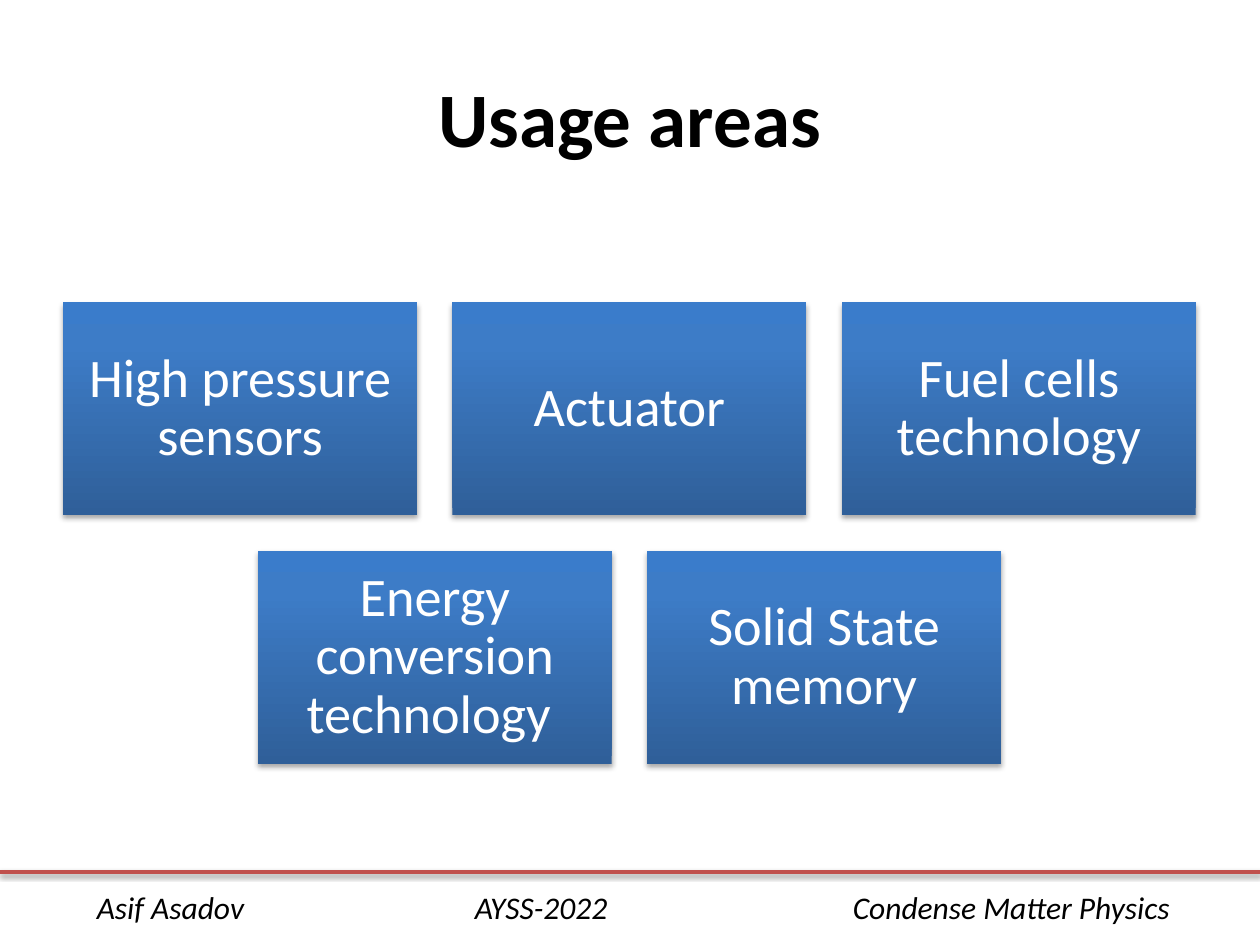
from dataclasses import dataclass

from lxml import etree
from pptx import Presentation, util as u
from pptx.dml.color import RGBColor
from pptx.enum import shapes, text
from pptx.oxml.ns import qn

COLORS = {"ink": "000000", "card_text": "FFFFFF", "rule": "C0504D"}
CARD_GRADIENT = ((0, "2F5F99"), (80, "3D7CC7"), (100, "3A7CCB"))
FONT = "Calibri"
WIDTH, HEIGHT = u.Inches(10), u.Inches(7.5)

# Card grid: three columns inside the side margins
LEFT, TOP = u.Inches(0.5), u.Inches(2.4)
CARD_W, CARD_H, GAP = u.Inches(2.81), u.Inches(1.69), u.Inches(0.28)


@dataclass
class Card:
    label: str
    column: float
    row: int


CARDS = (
    Card("High pressure sensors", 0, 0),
    Card("Actuator", 1, 0),
    Card("Fuel cells technology", 2, 0),
    Card("Energy conversion technology ", 0.5, 1),
    Card("Solid State memory", 1.5, 1),
)


def add_color(parent, hex_color: str):
    return etree.SubElement(parent, qn("a:srgbClr"), val=hex_color)


def add_shadow(effects, opacity: int, distance: float) -> None:
    """Cast a soft shadow straight down."""
    shadow = etree.SubElement(
        effects, qn("a:outerShdw"), blurRad=str(u.Pt(3.1)),
        dist=str(u.Pt(distance)), dir="5400000", rotWithShape="0")
    color = add_color(shadow, COLORS["ink"])
    etree.SubElement(color, qn("a:alpha"), val=str(opacity * 1000))


def write(tf, content: str, size: int, color: str, **style: bool):
    tf.word_wrap = True
    tf.text = content
    p = tf.paragraphs[0]
    for r in p.runs:
        r.font.name, r.font.size = FONT, u.Pt(size)
        r.font.color.rgb = RGBColor.from_string(COLORS[color])
        for name, value in style.items():
            setattr(r.font, name, value)
    return p


def add_card(slide, card: Card) -> None:
    sp = slide.shapes.add_shape(
        shapes.MSO_SHAPE.RECTANGLE,
        int(LEFT + card.column * (CARD_W + GAP)),
        TOP + card.row * (CARD_H + GAP), CARD_W, CARD_H)
    sp.fill.gradient()
    sp.fill.gradient_angle = 90
    stops = sp._element.spPr.find(".//" + qn("a:gsLst"))
    for stop in list(stops):
        stops.remove(stop)
    for position, color in CARD_GRADIENT:
        add_color(etree.SubElement(stops, qn("a:gs"), pos=str(position * 1000)), color)
    sp.line.fill.background()
    sp.shadow.inherit = False
    add_shadow(sp._element.spPr.find(qn("a:effectLst")), 35, 1.8)

    tf = sp.text_frame
    tf.margin_left = tf.margin_right = tf.margin_top = tf.margin_bottom = u.Inches(0.13)
    tf.vertical_anchor = text.MSO_ANCHOR.MIDDLE
    p = write(tf, card.label, 31, "card_text")
    p.alignment = text.PP_ALIGN.CENTER
    p.line_spacing = 0.9


def add_title(slide) -> None:
    box = slide.shapes.add_textbox(LEFT, u.Inches(0.3), WIDTH - 2 * LEFT, u.Inches(1.25))
    box.text_frame.vertical_anchor = text.MSO_ANCHOR.MIDDLE
    p = write(box.text_frame, "Usage areas", 44, "ink", bold=True)
    p.alignment = text.PP_ALIGN.CENTER


def add_footer(slide) -> None:
    y = u.Inches(6.92)
    rule = slide.shapes.add_connector(shapes.MSO_CONNECTOR.STRAIGHT, 0, y, WIDTH, y)
    rule.line.color.rgb = RGBColor.from_string(COLORS["rule"])
    rule.line.width = u.Pt(2)
    add_shadow(etree.SubElement(rule._element.spPr, qn("a:effectLst")), 38, 1.6)

    box = slide.shapes.add_textbox(u.Inches(0.67), u.Inches(7), u.Inches(8.96), u.Inches(0.4))
    parts = ("Asif Asadov", "AYSS-2022", "Condense Matter Physics")
    p = write(box.text_frame, "\t".join(parts), 18, "ink", italic=True)
    tabs = etree.SubElement(p._p.get_or_add_pPr(), qn("a:tabLst"))
    for column in range(1, len(parts)):
        etree.SubElement(tabs, qn("a:tab"), pos=str(u.Inches(3 * column)), algn="l")


def main() -> None:
    prs = Presentation()
    prs.slide_width, prs.slide_height = WIDTH, HEIGHT
    slide = prs.slides.add_slide(prs.slide_layouts[6])
    add_title(slide)
    for card in CARDS:
        add_card(slide, card)
    add_footer(slide)
    prs.save("out.pptx")


if __name__ == "__main__":
    main()
